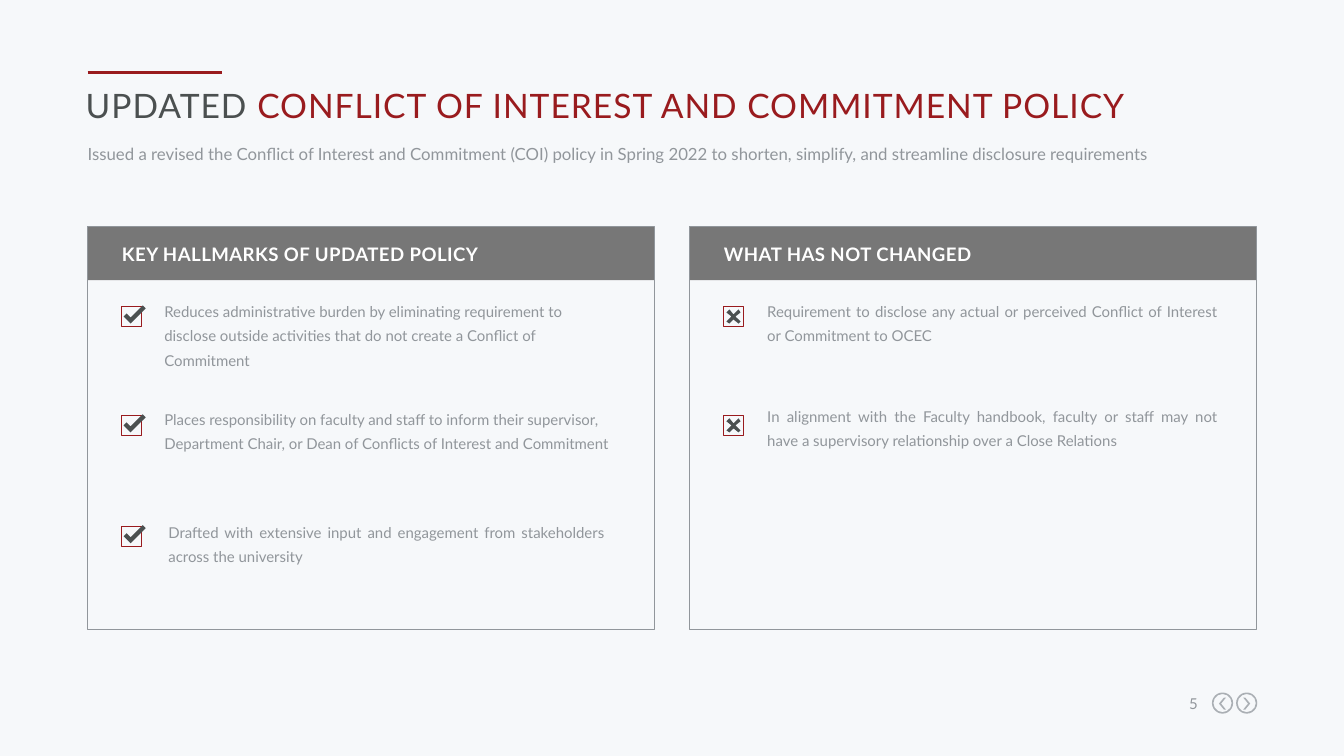
import pptx
import pptx.dml.color
import pptx.enum.shapes
import pptx.enum.text
import pptx.oxml
import pptx.util
from dataclasses import dataclass

Inches = pptx.util.Inches
Pt = pptx.util.Pt
RGB = pptx.dml.color.RGBColor.from_string
Shape = pptx.enum.shapes.MSO_SHAPE
Align = pptx.enum.text.PP_ALIGN


@dataclass(frozen=True)
class Theme:
    font: str = "Lato"
    background: RGB = RGB("F6F8FA")
    accent: RGB = RGB("991B1E")
    dark: RGB = RGB("4B5050")
    muted: RGB = RGB("91969B")
    header: RGB = RGB("777777")
    navigation: RGB = RGB("AAAFB4")
    white: RGB = RGB("FFFFFF")
    title_size: Pt = Pt(24)
    subtitle_size: Pt = Pt(12)
    header_size: Pt = Pt(13.3)
    body_size: Pt = Pt(10.7)
    line_spacing: Pt = Pt(17.3)


theme = Theme()


def paint(shape, fill=None, line=None):
    shape.shadow.inherit = False
    if fill is None:
        shape.fill.background()
    else:
        shape.fill.solid()
        shape.fill.fore_color.rgb = fill
    if line is None:
        shape.line.fill.background()
    else:
        shape.line.color.rgb = line
        shape.line.width = Pt(0.75)


def write(shape, runs, size, align=Align.LEFT, spacing=None, bold=False, tracking=0):
    frame = shape.text_frame
    frame.word_wrap = True
    frame.auto_size = pptx.enum.text.MSO_AUTO_SIZE.NONE
    frame.vertical_anchor = pptx.enum.text.MSO_ANCHOR.TOP
    frame.margin_left = frame.margin_right = frame.margin_top = frame.margin_bottom = 0
    paragraph = frame.paragraphs[0]
    paragraph.alignment = align
    if spacing:
        paragraph.line_spacing = spacing
    paragraph.font.name = theme.font
    paragraph.font.size = size
    paragraph.font.bold = bold
    for text, color in runs:
        run = paragraph.add_run()
        run.text = text
        run.font.color.rgb = color
        if tracking:
            run.font._element.set("spc", str(tracking))


presentation = pptx.Presentation()
presentation.slide_width = Inches(13.33)
presentation.slide_height = Inches(7.5)
slide = presentation.slides.add_slide(presentation.slide_layouts[5])
slide.background.fill.solid()
slide.background.fill.fore_color.rgb = theme.background
shapes = slide.shapes

accent_line = shapes.add_connector(
    pptx.enum.shapes.MSO_CONNECTOR.STRAIGHT,
    Inches(0.87), Inches(0.72), Inches(2.2), Inches(0.72))
accent_line.line.color.rgb = theme.accent
accent_line.line.width = Pt(2.25)
accent_line._element.spPr.append(pptx.oxml.parse_xml(
    '<a:effectLst xmlns:a="http://schemas.openxmlformats.org/drawingml/2006/main"/>'))

title = shapes.title
title.left, title.top = Inches(0.85), Inches(0.84)
title.width, title.height = Inches(11.6), Inches(0.56)
write(title, [("UPDATED ", theme.dark),
              ("CONFLICT OF INTEREST AND COMMITMENT POLICY", theme.accent)],
      theme.title_size, tracking=70)

subtitle = shapes.add_textbox(Inches(0.87), Inches(1.4), Inches(11.6), Inches(0.21))
write(subtitle, [("Issued a revised the Conflict of Interest and Commitment (COI) policy in "
                  "Spring 2022 to shorten, simplify, and streamline disclosure requirements",
                  theme.muted)],
      theme.subtitle_size, spacing=Pt(16))

check_mark = [(5, 7), (9, 11), (21, -1), (24, 2), (9, 17), (6, 14), (2, 10)]
cross_mark = [(3, 15), (8, 10), (3, 6), (6, 3), (10, 8), (15, 3),
              (17, 6), (12, 10), (17, 15), (15, 17), (10, 13), (6, 17)]

panels = [
    (0.87, "KEY HALLMARKS OF UPDATED POLICY", check_mark, [
        (3.04, 0.76, 2.94, 4.47, Align.LEFT,
         "Reduces administrative burden by eliminating requirement to disclose outside "
         "activities that do not create a Conflict of Commitment"),
        (4.12, 0.76, 4.01, 4.47, Align.LEFT,
         "Places responsibility on faculty and staff to inform their supervisor, "
         "Department Chair, or Dean of Conflicts of Interest and Commitment"),
        (5.22, 0.8, 5.13, 4.33, Align.JUSTIFY,
         "Drafted with extensive input and engagement from stakeholders across the university"),
    ]),
    (6.84, "WHAT HAS NOT CHANGED", cross_mark, [
        (3.04, 0.77, 2.94, 4.47, Align.JUSTIFY,
         "Requirement to disclose any actual or perceived Conflict of Interest or "
         "Commitment to OCEC"),
        (4.12, 0.77, 3.98, 4.47, Align.JUSTIFY,
         "In alignment with the Faculty handbook, faculty or staff may not have a "
         "supervisory relationship over a Close Relations"),
    ]),
]

for left, heading, mark_points, items in panels:
    header = shapes.add_shape(
        Shape.RECTANGLE, Inches(left), Inches(2.25), Inches(5.62), Inches(0.53))
    paint(header, fill=theme.header)
    frame = shapes.add_shape(
        Shape.RECTANGLE, Inches(left), Inches(2.25), Inches(5.62), Inches(4))
    paint(frame, line=theme.muted)
    heading_box = shapes.add_textbox(
        Inches(left + 0.34), Inches(2.39), Inches(4.89), Inches(0.22))
    write(heading_box, [(heading, theme.white)], theme.header_size,
          spacing=theme.line_spacing, bold=True, tracking=30)

    for box_top, text_offset, text_top, text_width, align, text in items:
        box_left = left + 0.335
        checkbox = shapes.add_shape(
            Shape.RECTANGLE, Inches(box_left), Inches(box_top), Inches(0.2), Inches(0.2))
        paint(checkbox, line=theme.accent)
        builder = shapes.build_freeform(*mark_points[0], scale=Inches(0.01))
        builder.add_line_segments(mark_points[1:], close=True)
        mark = builder.convert_to_shape(Inches(box_left), Inches(box_top))
        paint(mark, fill=theme.dark)
        item_box = shapes.add_textbox(
            Inches(left + text_offset), Inches(text_top), Inches(text_width), Inches(0.69))
        write(item_box, [(text, theme.muted)], theme.body_size, align,
              spacing=theme.line_spacing)

page_number = shapes.add_textbox(Inches(11.58), Inches(6.89), Inches(0.3), Inches(0.18))
write(page_number, [("5", theme.muted)], theme.body_size, Align.RIGHT, tracking=40)

for ring_left, arrow_offset, rotation in [(12.02, 0.07, 180), (12.26, 0.07, 0)]:
    ring = shapes.add_shape(
        Shape.DONUT, Inches(ring_left), Inches(6.87), Inches(0.21), Inches(0.21))
    ring.adjustments[0] = 0.07
    paint(ring, fill=theme.navigation)
    arrow = shapes.add_shape(
        Shape.CHEVRON, Inches(ring_left + arrow_offset), Inches(6.92),
        Inches(0.07), Inches(0.12))
    arrow.adjustments[0] = 0.7
    arrow.rotation = rotation
    paint(arrow, fill=theme.navigation)

presentation.save("out.pptx")
